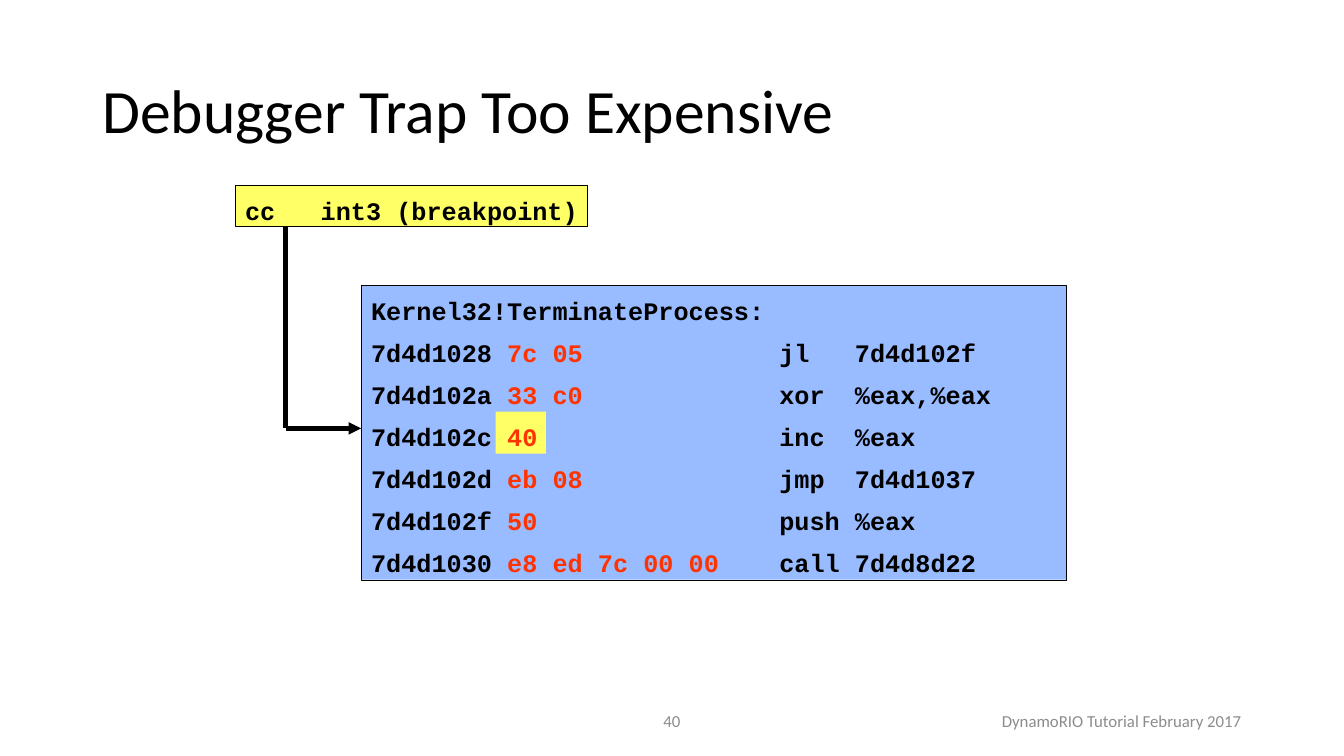
from dataclasses import dataclass, field
from typing import NamedTuple

from lxml.etree import SubElement
from pptx import Presentation
from pptx.dml.color import RGBColor
from pptx.enum.shapes import MSO_CONNECTOR as Connector, MSO_SHAPE as Preset
from pptx.enum.text import MSO_ANCHOR as Anchor, PP_ALIGN as Align
from pptx.oxml.ns import qn
from pptx.util import Pt

COLORS = {
    "black": "000000",
    "blue": "99BBFF",
    "yellow": "FFFF66",
    "red": "FF3300",
    "gray": "8C8C8C",
}
CODE_FONT = {"name": "Courier New", "size": Pt(18), "bold": True}
FOOTER_FONT = {"name": "Calibri", "size": Pt(12)}
TITLE_FONT = {"name": "Calibri", "size": Pt(44)}
CODE_FRAME = {"word_wrap": True, "vertical_anchor": Anchor.TOP, "margin_top": Pt(7)}
LABEL_FRAME = {"word_wrap": True, "vertical_anchor": Anchor.MIDDLE}
CODE_PARAGRAPH = {"alignment": Align.LEFT, "space_after": Pt(8.4)}
CHAR_WIDTH = 10.8


class Area(NamedTuple):
    left: float
    top: float
    width: float
    height: float


class Instruction(NamedTuple):
    address: str
    encoding: str
    mnemonic: str
    operands: str


class Piece(NamedTuple):
    text: str
    color: str = "black"


@dataclass
class Box:
    area: Area
    fill: str | None = None
    outlined: bool = False
    lines: list[list[Piece]] = field(default_factory=list)
    tab_columns: tuple[int, ...] = ()


@dataclass
class Label:
    area: Area
    piece: Piece
    font: dict
    paragraph: dict


@dataclass
class Line:
    start: tuple[float, float]
    end: tuple[float, float]
    arrow: bool = False


INSTRUCTIONS = [
    Instruction("7d4d1028", "7c 05", "jl", "7d4d102f"),
    Instruction("7d4d102a", "33 c0", "xor", "%eax,%eax"),
    Instruction("7d4d102c", "40", "inc", "%eax"),
    Instruction("7d4d102d", "eb 08", "jmp", "7d4d1037"),
    Instruction("7d4d102f", "50", "push", "%eax"),
    Instruction("7d4d1030", "e8 ed 7c 00 00", "call", "7d4d8d22"),
]
LISTING = [[Piece("Kernel32!TerminateProcess:")]] + [
    [Piece(f"{i.address} "), Piece(i.encoding, "red"), Piece(f"\t{i.mnemonic}\t{i.operands}")]
    for i in INSTRUCTIONS
]
BOXES = [
    Box(Area(258, 204, 504, 210), fill="blue"),
    Box(Area(354, 294, 36, 30), fill="yellow"),
    Box(Area(258, 204, 504, 211), outlined=True, lines=LISTING, tab_columns=(27, 32)),
    Box(Area(168, 132.5, 252, 29.5), "yellow", True, [[Piece("cc\tint3 (breakpoint)")]], (5,)),
]
LABELS = [
    Label(Area(66, 29, 828, 104.4), Piece("Debugger Trap Too Expensive"), TITLE_FONT,
          {"alignment": Align.LEFT, "line_spacing": 0.9}),
    Label(Area(318, 500.5, 324, 28.75), Piece("40", "gray"), FOOTER_FONT,
          {"alignment": Align.CENTER}),
    Label(Area(678, 500.5, 216, 28.75), Piece("DynamoRIO Tutorial February 2017", "gray"),
          FOOTER_FONT, {"alignment": Align.RIGHT}),
]
LINES = [
    Line((204, 306), (258, 306), arrow=True),
    Line((204, 162), (204, 306)),
]


def color(name: str) -> RGBColor:
    return RGBColor.from_string(COLORS[name])


def apply_format(target, values: dict) -> None:
    for attribute, value in values.items():
        setattr(target, attribute, value)


def write_piece(paragraph, piece: Piece, font: dict) -> None:
    run = paragraph.add_run()
    run.text = piece.text
    apply_format(run.font, font)
    run.font.color.rgb = color(piece.color)


def add_tabs(paragraph, columns: tuple[int, ...]) -> None:
    tab_list = SubElement(paragraph._p.get_or_add_pPr(), qn("a:tabLst"))
    for column in columns:
        SubElement(tab_list, qn("a:tab"), pos=str(Pt(column * CHAR_WIDTH)), algn="l")


def draw_box(slide, box: Box) -> None:
    rectangle = slide.shapes.add_shape(Preset.RECTANGLE, *map(Pt, box.area))
    rectangle.shadow.inherit = False
    if box.fill:
        rectangle.fill.solid()
        rectangle.fill.fore_color.rgb = color(box.fill)
    else:
        rectangle.fill.background()
    if box.outlined:
        rectangle.line.width = Pt(0.75)
        rectangle.line.color.rgb = color("black")
    else:
        rectangle.line.fill.background()
    frame = rectangle.text_frame
    apply_format(frame, CODE_FRAME)
    for index, pieces in enumerate(box.lines):
        paragraph = frame.add_paragraph() if index else frame.paragraphs[0]
        add_tabs(paragraph, box.tab_columns)
        apply_format(paragraph, CODE_PARAGRAPH)
        for piece in pieces:
            write_piece(paragraph, piece, CODE_FONT)


def draw_label(slide, label: Label) -> None:
    frame = slide.shapes.add_textbox(*map(Pt, label.area)).text_frame
    apply_format(frame, LABEL_FRAME)
    paragraph = frame.paragraphs[0]
    apply_format(paragraph, label.paragraph)
    write_piece(paragraph, label.piece, label.font)


def draw_line(slide, line: Line) -> None:
    connector = slide.shapes.add_connector(Connector.STRAIGHT, *map(Pt, line.start + line.end))
    connector.line.width = Pt(3)
    connector.line.color.rgb = color("black")
    if line.arrow:
        SubElement(connector.line._get_or_add_ln(), qn("a:tailEnd"), type="triangle")
    SubElement(connector._element.spPr, qn("a:effectLst"))


def main() -> None:
    deck = Presentation()
    apply_format(deck, {"slide_width": Pt(960), "slide_height": Pt(540)})
    slide = deck.slides.add_slide(deck.slide_layouts[6])
    for box in BOXES:
        draw_box(slide, box)
    for label in LABELS:
        draw_label(slide, label)
    for line in LINES:
        draw_line(slide, line)
    deck.save("out.pptx")


if __name__ == "__main__":
    main()
